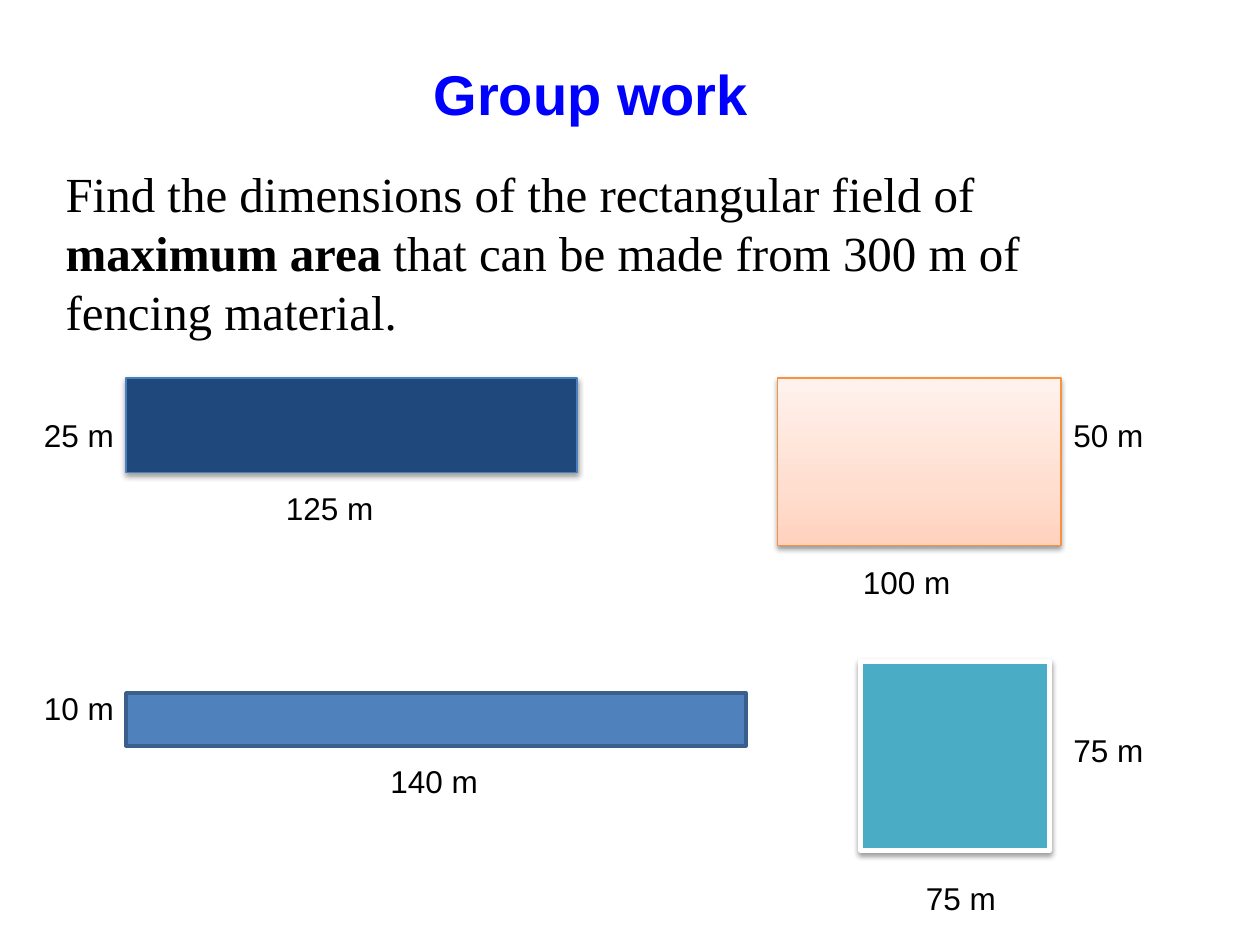
from copy import deepcopy
from dataclasses import dataclass

from lxml import etree
from pptx import Presentation
from pptx.dml.color import RGBColor
from pptx.enum.shapes import MSO_SHAPE
from pptx.enum.text import MSO_ANCHOR, MSO_AUTO_SIZE, PP_ALIGN
from pptx.oxml.ns import qn
from pptx.util import Inches, Pt

RECTANGLE = MSO_SHAPE.RECTANGLE
TOP = MSO_ANCHOR.TOP
NO_AUTOFIT = MSO_AUTO_SIZE.NONE
CENTER, LEFT = PP_ALIGN.CENTER, PP_ALIGN.LEFT
TITLE_AND_CONTENT = 1


@dataclass(frozen=True)
class Theme:
    title = {"name": "Arial", "size": Pt(32), "bold": True,
             "color": "0000FF"}
    body = {"name": "Times New Roman", "size": Pt(28), "bold": False,
            "color": "000000"}
    label = {"name": "Arial", "size": Pt(18), "bold": False,
             "color": "000000"}
    navy = {"fill": "1F497D", "line": "4B7EBC", "width": 0.75}
    peach = {"fill": [(0, "FFD2BD"), (0.35, "FFDED0"), (1, "FFF2ED")],
             "line": "F69240", "width": 0.75}
    blue = {"fill": "4F81BD", "line": "3A5F8C", "width": 2, "shadow": False}
    teal = {"fill": "4BACC6", "line": "FFFFFF", "width": 3}


THEME = Theme()
LABEL_HEIGHT = 0.4

# Field box, style, box of the width label, box of the height label
FIELDS = [
    ((1, 3, 3.58, 0.75), THEME.navy,
     ("125 m", 2.17, 3.83, 1.17), ("25 m", 0.25, 3.25, 0.92)),
    ((6.17, 3, 2.25, 1.33), THEME.peach,
     ("100 m", 6.75, 4.42, 1.17), ("50 m", 8.42, 3.25, 1.17)),
    ((1, 5.5, 4.92, 0.42), THEME.blue,
     ("140 m", 3, 6, 1.17), ("10 m", 0.25, 5.42, 0.92)),
    ((6.83, 5.25, 1.5, 1.5), THEME.teal,
     ("75 m", 7.25, 6.93, 1.17), ("75 m", 8.42, 5.75, 1.17)),
]


def place(shape, box):
    for name, value in zip(("left", "top", "width", "height"), box):
        setattr(shape, name, Inches(value))


def add_run(paragraph, text, style, **changes):
    run = paragraph.add_run()
    run.text = text
    for name, value in {**style, **changes}.items():
        if name == "color":
            run.font.color.rgb = RGBColor.from_string(value)
        else:
            setattr(run.font, name, value)


def prepare_frame(shape, alignment, wrap=True):
    """Set up a top-anchored text frame and return its first paragraph."""
    frame = shape.text_frame
    settings = {"word_wrap": wrap, "auto_size": NO_AUTOFIT,
                "vertical_anchor": TOP}
    for name, value in settings.items():
        setattr(frame, name, value)
    paragraph = frame.paragraphs[0]
    paragraph.alignment = alignment
    paragraph.space_before = Pt(0)
    return paragraph


def add_title(slide, box):
    title = slide.shapes.title
    place(title, box)
    paragraph = prepare_frame(title, CENTER, wrap=False)
    add_run(paragraph, "Group work", THEME.title)


def add_task(slide, box):
    body = slide.placeholders[1]
    place(body, box)
    paragraph = prepare_frame(body, LEFT)
    properties = paragraph._p.get_or_add_pPr()
    properties.set("marL", "0")
    properties.set("indent", "0")
    etree.SubElement(properties, qn("a:buNone"))
    add_run(paragraph, "Find the dimensions of the rectangular field of ",
            THEME.body)
    add_run(paragraph, "maximum area ", THEME.body, bold=True)
    add_run(paragraph, "that can be made from 300 m of fencing material.",
            THEME.body)


def add_label(slide, text, left, top, width):
    label = slide.shapes.add_textbox(
        *map(Inches, (left, top, width, LABEL_HEIGHT)))
    add_run(prepare_frame(label, LEFT), text, THEME.label)


def fill_gradient(shape, stops):
    """Fill upwards through three colour stops."""
    shape.fill.gradient()
    shape.fill.gradient_angle = 90
    stop_list = shape._element.spPr.find(".//" + qn("a:gsLst"))
    stop_list.append(deepcopy(stop_list[-1]))
    for stop, (position, color) in zip(shape.fill.gradient_stops, stops):
        stop.position = position
        stop.color.rgb = RGBColor.from_string(color)


def add_shadow(shape):
    effects = shape._element.spPr.find(qn("a:effectLst"))
    shadow = etree.SubElement(
        effects, qn("a:outerShdw"), blurRad=str(Pt(3.1)), dist=str(Pt(1.6)),
        dir="5400000", rotWithShape="0")
    color = etree.SubElement(shadow, qn("a:srgbClr"), val="000000")
    etree.SubElement(color, qn("a:alpha"), val="38000")


def add_field(slide, box, style, width_label, height_label):
    """Draw one rectangular field with its two dimensions."""
    field = slide.shapes.add_shape(RECTANGLE, *map(Inches, box))
    if isinstance(style["fill"], list):
        fill_gradient(field, style["fill"])
    else:
        field.fill.solid()
        field.fill.fore_color.rgb = RGBColor.from_string(style["fill"])
    field.line.color.rgb = RGBColor.from_string(style["line"])
    field.line.width = Pt(style["width"])
    field.shadow.inherit = False
    if style.get("shadow", True):
        add_shadow(field)
    for label in (width_label, height_label):
        add_label(slide, *label)


def main():
    presentation = Presentation()
    presentation.slide_width = Inches(10)
    presentation.slide_height = Inches(7.5)
    slide = presentation.slides.add_slide(
        presentation.slide_layouts[TITLE_AND_CONTENT])
    add_title(slide, (3.33, 0.42, 2.72, 0.64))
    add_task(slide, (0.42, 1.25, 8.67, 1.51))
    for field in FIELDS:
        add_field(slide, *field)
    presentation.save("out.pptx")


if __name__ == "__main__":
    main()
